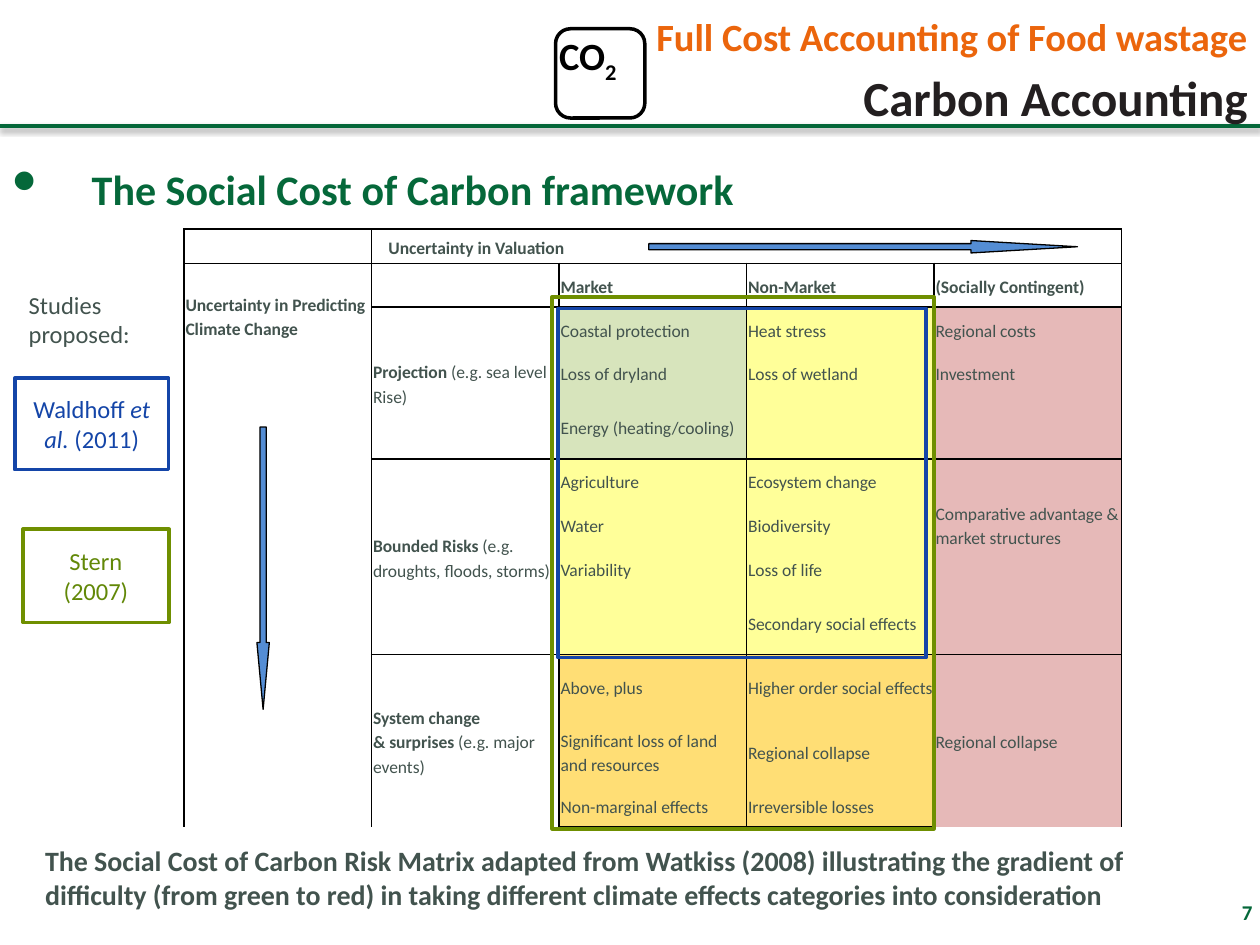
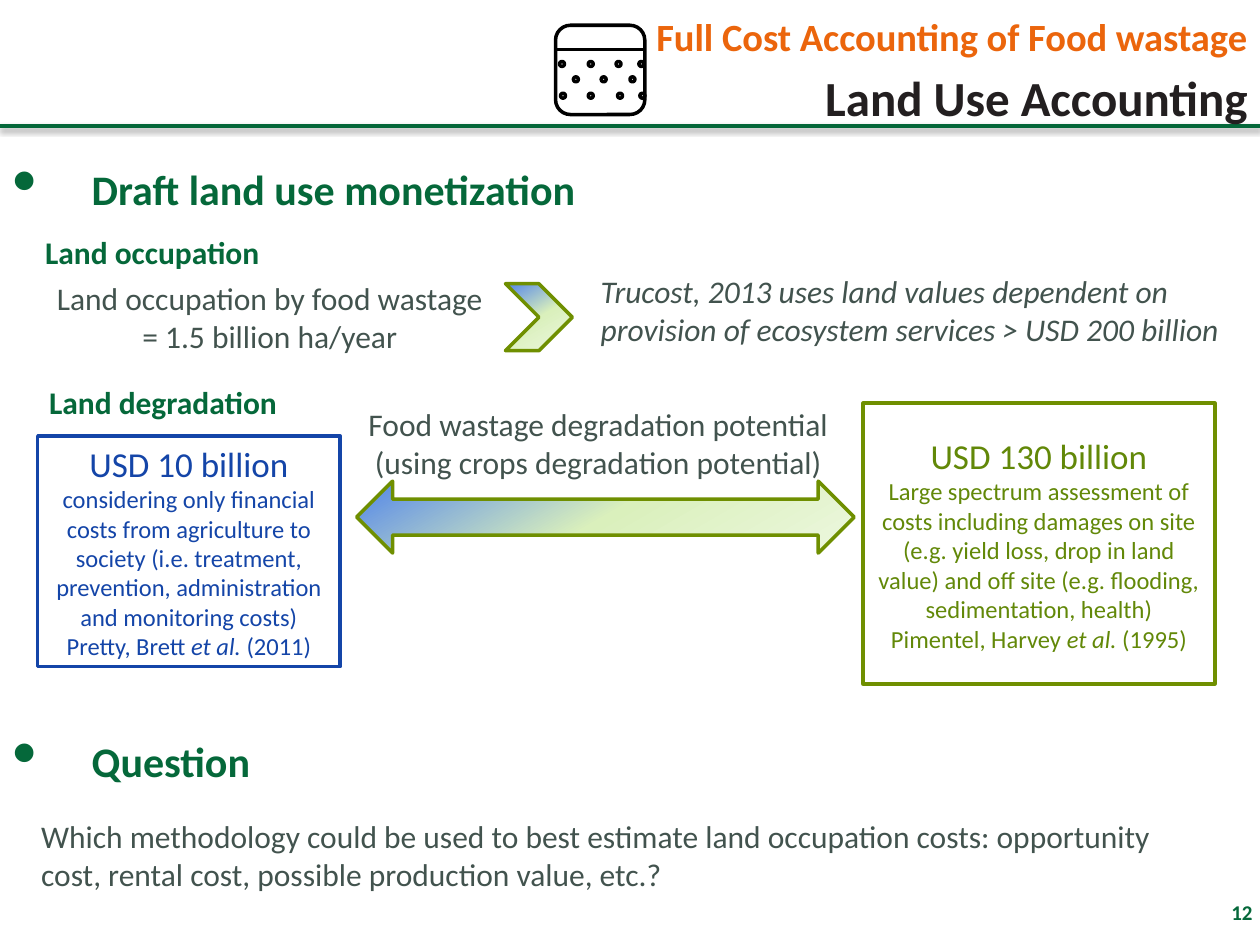
from copy import deepcopy
from lxml import etree
from pptx import Presentation
from pptx.dml.color import RGBColor
from pptx.enum import shapes as es, text as et
from pptx.oxml.ns import qn
from pptx.util import Cm, Pt

# Colours and font
FONT = "Calibri"
GREEN = RGBColor(0x05, 0x68, 0x3A)
ORANGE = RGBColor(0xEB, 0x65, 0x0C)
INK = RGBColor(0x23, 0x1F, 0x20)
SLATE = RGBColor(0x42, 0x53, 0x4E)
BLUE = RGBColor(0x14, 0x45, 0xA8)
OLIVE = RGBColor(0x6F, 0x8F, 0x00)
MOSS = RGBColor(0x62, 0x88, 0x08)
STEEL = RGBColor(0x54, 0x8D, 0xD4)
BLACK = RGBColor(0, 0, 0)
WHITE = RGBColor(255, 255, 255)
LIME = RGBColor(0xD7, 0xE4, 0xBC)
LEMON = RGBColor(0xFF, 0xFF, 0x99)
AMBER = RGBColor(0xFF, 0xDE, 0x75)
ROSE = RGBColor(0xE6, 0xB9, 0xB8)
FADE = [(0, RGBColor(0x52, 0x85, 0xEA)), (0.5, RGBColor(0xDA, 0xF0, 0xBC)),
        (1, RGBColor(0xEC, 0xF7, 0xDE))]

LEFT, MID, RIGHT = et.PP_ALIGN.LEFT, et.PP_ALIGN.CENTER, et.PP_ALIGN.RIGHT
TOP, CORE = et.MSO_ANCHOR.TOP, et.MSO_ANCHOR.MIDDLE
KIND = es.MSO_SHAPE

# Content: a paragraph is a list of runs, a run is (text, style marks)
# Marks: b bold, i italic, _ subscript
BANNER = "Full Cost Accounting of Food wastage"

# Risk matrix: (row, column) -> text
MATRIX = {
    (0, 1): [[("Uncertainty in Valuation", "b")]],
    (1, 0): [[("Uncertainty in Predicting Climate Change", "b")]],
    (1, 2): [[("Market", "b")]],
    (1, 3): [[("Non-Market", "b")]],
    (1, 4): [[("(Socially Contingent)", "b")]],
    (2, 1): [[("Projection", "b"), (" (e.g. sea level Rise)", "")]],
    (5, 1): [[("Bounded Risks", "b"), (" (e.g. droughts, floods, storms)", "")]],
    (9, 1): [[("System change", "b")],
             [("& surprises", "b"), (" (e.g. major events)", "")]],
}
EFFECTS = {
    2: ["Coastal protection", "Loss of dryland", "Energy (heating/cooling)",
        "Agriculture", "Water", "Variability", "",
        "Above, plus", "Significant loss of land and resources",
        "Non-marginal effects"],
    3: ["Heat stress", "Loss of wetland", "",
        "Ecosystem change", "Biodiversity", "Loss of life",
        "Secondary social effects", "Higher order social effects",
        "Regional collapse", "Irreversible losses"],
    4: ["Regional costs", "Investment", "",
        "Comparative advantage & market structures", "", "", "",
        "Regional collapse"],
}
SPANS = [(0, 1, 0, 4), (1, 0, 11, 0), (2, 1, 4, 1), (5, 1, 8, 1),
         (9, 1, 11, 1), (5, 4, 7, 4), (9, 4, 11, 4)]
BLOCKS = [(0, 0), (1, 1), (2, 4), (5, 8), (9, 11)]
SIDE = [(0, 0), (1, 11)]
TINTS = {2: [LIME, LEMON, ROSE], 5: [LEMON, LEMON, ROSE], 9: [AMBER, AMBER, ROSE]}
SMALL, TALL = 0.88, 1.3
ROWS = [0.69] + [SMALL] * 3 + [TALL] + [SMALL] * 3 + [TALL] * 3 + [SMALL]
COLS = [3.78] * 5

CAPTION = ("The Social Cost of Carbon Risk Matrix adapted from Watkiss (2008) "
           "illustrating the gradient of difficulty (from green to red) in taking "
           "different climate effects categories into consideration")
WALD = [[("Waldhoff ", ""), ("et al.", "i"), (" (2011)", "")]]

LOW = [("USD 10 billion", 20),
       ("considering only financial costs from agriculture to society (i.e. "
        "treatment, prevention, administration and monitoring costs)", 14)]
LOW_REF = [("Pretty, Brett ", ""), ("et al. ", "i"), ("(2011)", "")]
HIGH = [("USD 130 billion", 20),
        ("Large spectrum assessment of costs including damages on site (e.g. "
         "yield loss, drop in land value) and off site (e.g. flooding, "
         "sedimentation, health)", 14)]
HIGH_REF = [("Pimentel, Harvey ", ""), ("et al. ", "i"), ("(1995)", "")]

# Plain text boxes: left, top, width, height, lines, marks, colour, alignment
NOTES = [
    (0.66, 4.57, 21.7, 1.02, ["Land occupation"], "b", GREEN, LEFT),
    (0.74, 7.59, 21.7, 1.02, ["Land degradation"], "b", GREEN, LEFT),
    (0.74, 5.51, 9.4, 1.8, ["Land occupation by food wastage",
                            "= 1.5 billion ha/year"], "", SLATE, MID),
    (7.06, 8.05, 10, 1.8, ["Food wastage degradation potential (using crops "
                           "degradation potential)"], "", SLATE, MID),
    (11.86, 5.36, 13.54, 1.8, ["Trucost, 2013 uses land values dependent on "
                               "provision of ecosystem services > USD 200 billion"],
     "i", SLATE, LEFT),
    (0.58, 16.35, 24.13, 1.8, ["Which methodology could be used to best estimate "
                               "land occupation costs: opportunity cost, rental "
                               "cost, possible production value, etc.?"],
     "", SLATE, LEFT),
]
SOIL = {1.24: [11.28, 11.86, 12.42, 12.88], 1.55: [11.56, 12.12, 12.7],
        1.88: [11.3, 11.86, 12.45, 12.9]}


# Helpers
def box(*cm):
    return [Cm(n) for n in cm]


def add_run(para, words, marks, size, ink):
    run = para.add_run()
    run.text = words
    font = run.font
    font.name, font.size, font.color.rgb = FONT, Pt(size), ink
    font.bold, font.italic = "b" in marks, "i" in marks
    if "_" in marks:
        font._element.set("baseline", "-25000")


def write(frame, paras, size, ink, align=LEFT, anchor=TOP, lead=None):
    """Fill a frame; size is one number or one per paragraph."""
    frame.word_wrap = True
    frame.vertical_anchor = anchor
    sizes = size if isinstance(size, list) else [size] * len(paras)
    for n, (runs, pts) in enumerate(zip(paras, sizes)):
        para = frame.paragraphs[0] if n == 0 else frame.add_paragraph()
        para.alignment = align
        para.line_spacing = lead
        for words, marks in runs:
            add_run(para, words, marks, pts, ink)


def label(to, spot, paras, size, ink, align=LEFT):
    frame = to.add_textbox(*box(*spot)).text_frame
    write(frame, paras, size, ink, align)
    return frame


def shape(to, kind, spot, line, fill=None, width=2, adj=()):
    form = to.add_shape(kind, *box(*spot))
    form.shadow.inherit = False
    form.line.color.rgb, form.line.width = line, Pt(width)
    for n, part in enumerate(adj):
        form.adjustments[n] = part
    if fill is None:
        form.fill.background()
    elif fill is FADE:
        form.fill.gradient()
        form.fill.gradient_angle = 300
        stops = form._element.spPr.find(".//" + qn("a:gsLst"))
        stops.insert(1, deepcopy(stops[0]))
        for stop, (place, tone) in zip(form.fill.gradient_stops, FADE):
            stop.position, stop.color.rgb = place, tone
    else:
        form.fill.solid()
        form.fill.fore_color.rgb = fill
    return form


def rule(to, x1, y1, x2, y2, ink, width):
    line = to.add_connector(es.MSO_CONNECTOR.STRAIGHT, *box(x1, y1, x2, y2))
    line.line.color.rgb, line.line.width = ink, Pt(width)
    return etree.SubElement(line._element.spPr, qn("a:effectLst"))


def heading(to, top, words):
    frame = label(to, (0, top, 25.4, 1.8), [[(words, "b")]], 24, GREEN)
    para = frame.paragraphs[0]
    para.space_after = Pt(12)
    props = para._p.get_or_add_pPr()
    props.set("marL", str(Cm(1.6)))
    props.set("indent", str(-Cm(1.6)))
    etree.SubElement(props, qn("a:buSzPct"), val="170000")
    etree.SubElement(props, qn("a:buChar"), char="•")


def start(deck, topic, number):
    """New slide with the shared rule, banner, topic and page number."""
    slide = deck.slides.add_slide(deck.slide_layouts[5])
    to = slide.shapes
    effect = rule(to, 0, 2.54, 25.4, 2.54, GREEN, 2)
    shade = etree.SubElement(effect, qn("a:outerShdw"), blurRad=str(Pt(3.1)),
                             dist=str(Pt(1.8)), dir="5400000", rotWithShape="0")
    tone = etree.SubElement(shade, qn("a:srgbClr"), val="000000")
    etree.SubElement(tone, qn("a:alpha"), val="35000")

    title = to.title
    title.left, title.top, title.width, title.height = box(3.81, 0.08, 21.59, 0.99)
    frame = title.text_frame
    frame.auto_size = et.MSO_AUTO_SIZE.NONE
    frame.margin_top = Cm(0.18)
    write(frame, [[(BANNER, "b")]], 22, ORANGE, RIGHT)
    label(to, (3.76, 1.24, 21.64, 0.8), [[(topic, "b")]], 28, INK, RIGHT)
    label(to, (23.52, 18.01, 1.98, 0.58), [[(str(number), "b")]], 12, GREEN, RIGHT)
    return to


def border(cell, sides):
    props = cell._tc.get_or_add_tcPr()
    for n, side in enumerate("LRTB"):
        line = etree.Element(qn("a:ln" + side), w=str(Pt(1)))
        if side in sides:
            ink = etree.SubElement(line, qn("a:solidFill"))
            etree.SubElement(ink, qn("a:srgbClr"), val=str(BLACK))
        else:
            etree.SubElement(line, qn("a:noFill"))
        props.insert(n, line)


def matrix(to):
    frame = to.add_table(len(ROWS), len(COLS),
                         *box(3.71, 4.62, sum(COLS), sum(ROWS)))
    table = frame.table
    table.first_row = table.horz_banding = False
    for col, wide in zip(table.columns, COLS):
        col.width = Cm(wide)
    for row, high in zip(table.rows, ROWS):
        row.height = Cm(high)
    cells = dict(MATRIX)
    for c, words in EFFECTS.items():
        cells.update({(r, c): [[(word, "")]]
                      for r, word in enumerate(words, 2) if word})
    for r1, c1, r2, c2 in SPANS:
        table.cell(r1, c1).merge(table.cell(r2, c2))
    for r in range(len(ROWS)):
        for c in range(len(COLS)):
            cell = table.cell(r, c)
            cell.margin_left = cell.margin_right = cell.margin_top = Cm(0.03)
            cell.margin_bottom = 0
            first, last = next(b for b in (BLOCKS if c else SIDE)
                               if b[0] <= r <= b[1])
            if c > 1 and first in TINTS:
                cell.fill.solid()
                cell.fill.fore_color.rgb = TINTS[first][c - 2]
            else:
                cell.fill.background()
            border(cell, "LR" + "T" * (r == first) + "B" * (r == last))
            if (r, c) in cells:
                write(cell.text_frame, cells[r, c], 10, SLATE, lead=1.15)
                cell.vertical_anchor = CORE if c else TOP
            else:
                etree.SubElement(cell.text_frame.paragraphs[0]._p,
                                 qn("a:endParaRPr"), sz="1000")
    table.cell(0, 1).margin_left = Cm(0.34)
    table.cell(1, 0).margin_top = Cm(0.57)


def carbon(deck):
    to = start(deck, "Carbon Accounting", 7)
    heading(to, 3.18, "The Social Cost of Carbon framework")
    # Carbon badge
    badge = to.add_group_shape().shapes
    shape(badge, KIND.ROUNDED_RECTANGLE, (11.2, 0.58, 1.8, 1.8), BLACK, WHITE)
    label(badge, (11, 0.53, 1.7, 1.19), [[("CO", "b"), ("2", "b_")]],
          22, BLACK, MID).word_wrap = False
    # Matrix with its two arrows
    matrix(to)
    shape(to, KIND.RIGHT_ARROW, (13.08, 4.85, 8.64, 0.25), BLACK, STEEL, 0.75,
          (0.5, 8.58))
    shape(to, KIND.DOWN_ARROW, (5.18, 8.61, 0.25, 5.69), BLACK, STEEL, 0.75,
          (0.5, 5.38))
    label(to, (0.66, 16.89, 22.45, 1.63), [[(CAPTION, "b")]], 16, SLATE)
    # Studies and the area each one covers
    shape(to, KIND.RECTANGLE, (11.25, 6.22, 7.42, 7.04), BLUE)
    wald = shape(to, KIND.RECTANGLE, (0.3, 7.62, 3.1, 1.85), BLUE)
    write(wald.text_frame, WALD, 14, BLUE, MID, CORE)
    shape(to, KIND.RECTANGLE, (11.13, 5.99, 7.7, 10.72), OLIVE)
    stern = shape(to, KIND.RECTANGLE, (0.46, 10.67, 2.95, 1.88), OLIVE, WHITE)
    write(stern.text_frame, [[("Stern (2007)", "")]], 14, MOSS, MID, CORE)
    label(to, (0.33, 5.72, 3.1, 1.45), [[("Studies proposed:", "")]], 14, SLATE)


def land(deck):
    to = start(deck, "Land Use Accounting", 12)
    heading(to, 3.18, "Draft land use monetization")
    # Soil badge
    badge = to.add_group_shape().shapes
    shape(badge, KIND.ROUNDED_RECTANGLE, (11.2, 0.51, 1.8, 1.8), BLACK, WHITE)
    rule(badge, 11.23, 0.99, 12.98, 0.99, BLACK, 1.75)
    for y, row in SOIL.items():
        for x in row:
            shape(badge, KIND.OVAL, (x, y, 0.1, 0.1), BLACK)
    heading(to, 14.71, "Question")
    # Arrows, then text and cost boxes
    shape(to, KIND.LEFT_RIGHT_ARROW, (7.19, 9.7, 10.03, 1.45), OLIVE, FADE)
    shape(to, KIND.CHEVRON, (10.19, 5.72, 1.35, 1.35), OLIVE, FADE)
    for *spot, lines, marks, ink, align in NOTES:
        label(to, spot, [[(line, marks)] for line in lines], 18, ink, align)
    for spot, edge, ink, fill, costs, ref in (
            ((0.76, 8.79, 6.1, 4.65), BLUE, BLUE, None, LOW, LOW_REF),
            ((17.4, 8.13, 7.09, 5.66), OLIVE, MOSS, WHITE, HIGH, HIGH_REF)):
        cost = shape(to, KIND.RECTANGLE, spot, edge, fill)
        write(cost.text_frame, [[(words, "")] for words, _ in costs] + [ref],
              [size for _, size in costs] + [14], ink, MID, CORE)


def main():
    deck = Presentation()
    deck.slide_width, deck.slide_height = Cm(25.4), Cm(19.05)
    carbon(deck)
    land(deck)
    deck.save("out.pptx")


if __name__ == "__main__":
    main()
